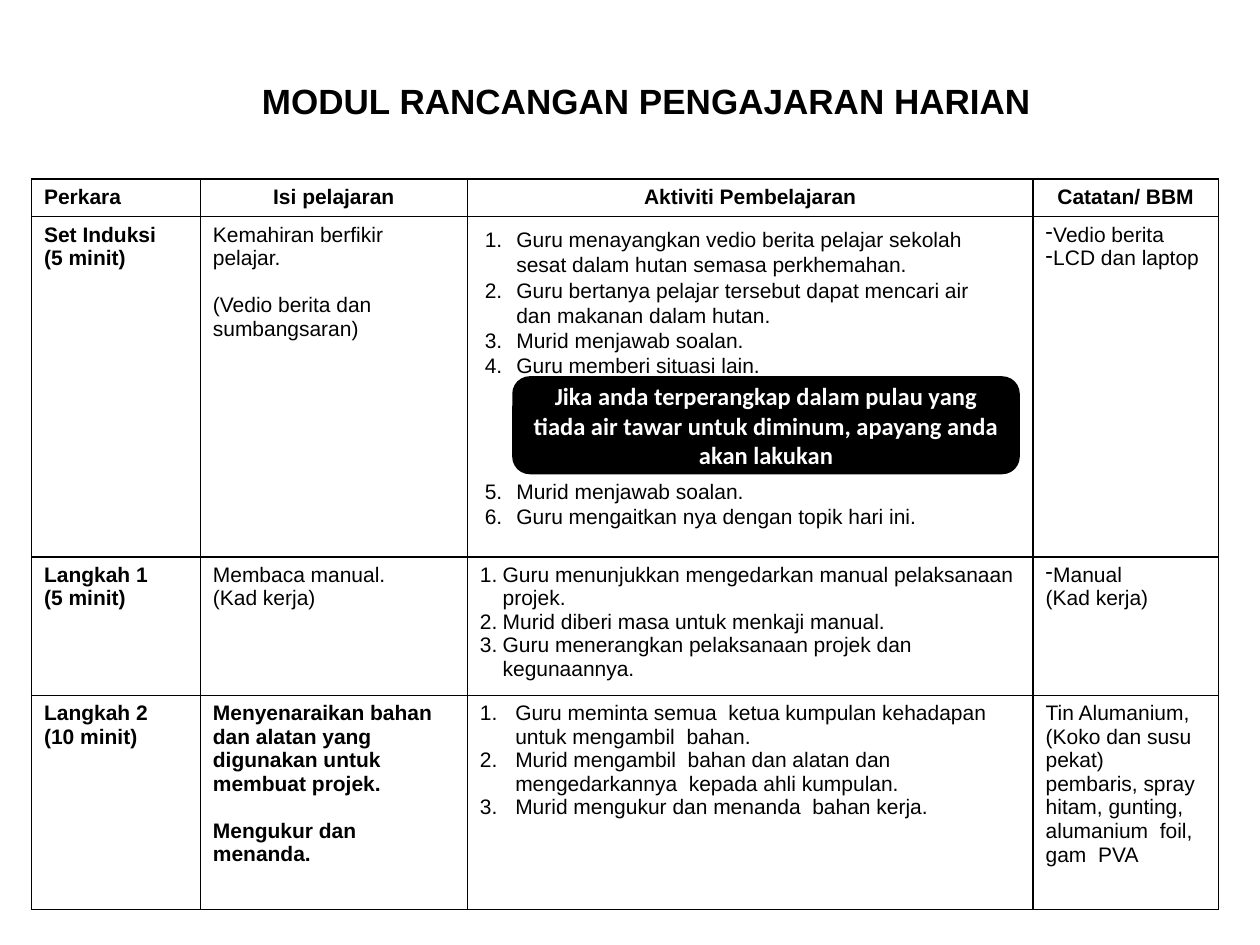
from dataclasses import dataclass

from lxml import etree
from pptx import Presentation
from pptx.dml.color import RGBColor
from pptx.enum.shapes import MSO_SHAPE
from pptx.enum.text import MSO_ANCHOR, MSO_AUTO_SIZE, PP_ALIGN
from pptx.oxml.ns import qn
from pptx.util import Inches, Pt

LEFT, CENTER = PP_ALIGN.LEFT, PP_ALIGN.CENTER
MIDDLE = MSO_ANCHOR.MIDDLE
NO_FIT = MSO_AUTO_SIZE.NONE
ROUNDED = MSO_SHAPE.ROUNDED_RECTANGLE
COLORS = {"ink": "000000", "paper": "FFFFFF"}
NUMBERED = "arabicPeriod"
GAP = 13.4
COL_WIDTHS = (1.34, 2.12, 4.49, 1.47)
ROW_HEIGHTS = (0.3, 2.7, 1.1, 1.7)


@dataclass
class Para:
    text: str
    bold: bool = False
    align: PP_ALIGN = LEFT
    bullet: str = ""
    indent: float = 0
    before: float = 0
    line: float = 0


def rgb(name: str) -> RGBColor:
    return RGBColor.from_string(COLORS[name])


def write(tf, paras: list[Para], size=12, font="Arial", color="ink") -> None:
    for i, item in enumerate(paras):
        p = tf.paragraphs[0] if i == 0 else tf.add_paragraph()
        p.alignment = item.align
        p.space_before = Pt(item.before)
        if item.line:
            p.line_spacing = Pt(item.line)
        if item.bullet:
            pPr = p._p.get_or_add_pPr()
            pPr.set("marL", str(Inches(item.indent)))
            pPr.set("indent", str(-Inches(item.indent)))
            if item.bullet == NUMBERED:
                etree.SubElement(pPr, qn("a:buAutoNum"), type=NUMBERED)
            else:
                etree.SubElement(pPr, qn("a:buChar"), char=item.bullet)
        r = p.add_run()
        r.text = item.text
        r.font.size = Pt(size)
        r.font.name = font
        r.font.bold = item.bold
        r.font.color.rgb = rgb(color)


def add_borders(cell) -> None:
    tcPr = cell._tc.get_or_add_tcPr()
    for i, side in enumerate(("a:lnL", "a:lnR", "a:lnT", "a:lnB")):
        ln = etree.Element(qn(side), w=str(Pt(1)))
        fill = etree.SubElement(ln, qn("a:solidFill"))
        etree.SubElement(fill, qn("a:srgbClr"), val=COLORS["ink"])
        tcPr.insert(i, ln)


def bold(*texts: str) -> list[Para]:
    return [Para(text, bold=True) for text in texts]


def plain(*texts: str) -> list[Para]:
    return [Para(text) for text in texts]


def numbered(indent: float, *texts: str) -> list[Para]:
    return [Para(text, bullet=NUMBERED, indent=indent) for text in texts]


def dashed(*texts: str) -> list[Para]:
    return [Para(text, bullet="-", indent=0.06) for text in texts]


def heading(text: str) -> list[Para]:
    return [Para(text, bold=True, align=CENTER)]


ROWS = [
    [bold("Perkara"), heading("Isi pelajaran"),
     heading("Aktiviti Pembelajaran"), heading("Catatan/ BBM")],
    [bold("Set Induksi", "(5 minit)"),
     [Para("Kemahiran berfikir pelajar."),
      Para("(Vedio berita dan sumbangsaran)", before=GAP)],
     [],
     dashed("Vedio berita", "LCD dan laptop")],
    [bold("Langkah 1", "(5 minit)"),
     plain("Membaca manual.", "(Kad kerja)"),
     numbered(0.18,
              "Guru menunjukkan mengedarkan manual pelaksanaan projek.",
              "Murid diberi masa untuk menkaji manual.",
              "Guru menerangkan pelaksanaan projek dan kegunaannya."),
     dashed("Manual") + plain("(Kad kerja)")],
    [bold("Langkah 2", "(10 minit)"),
     [Para("Menyenaraikan bahan dan alatan yang digunakan untuk membuat projek.", bold=True),
      Para("Mengukur dan", bold=True, before=GAP),
      Para("menanda.", bold=True)],
     numbered(0.28,
              "Guru meminta semua  ketua kumpulan kehadapan untuk mengambil  bahan.",
              "Murid mengambil  bahan dan alatan dan mengedarkannya  kepada ahli kumpulan.",
              "Murid mengukur dan menanda  bahan kerja."),
     plain("Tin Alumanium, (Koko dan susu pekat)  pembaris, spray hitam, "
           "gunting, alumanium  foil, gam  PVA")],
]

INDUCTION_STEPS = numbered(
    0.25,
    "Guru menayangkan vedio berita pelajar sekolah sesat dalam hutan semasa perkhemahan.",
    "Guru bertanya pelajar tersebut dapat mencari air dan makanan dalam hutan.",
    "Murid menjawab soalan.",
    "Guru memberi situasi lain.",
    "Murid menjawab soalan.",
    "Guru mengaitkan nya dengan topik hari ini.",
)


def add_title(s) -> None:
    title = s.shapes.title
    title.left, title.top = Inches(1.92), Inches(0.58)
    title.width, title.height = Inches(6.42), Inches(0.43)
    tf = title.text_frame
    tf.word_wrap = True
    tf.auto_size = NO_FIT
    tf.vertical_anchor = MIDDLE
    write(tf, heading("MODUL RANCANGAN PENGAJARAN HARIAN"), size=20)


def add_lesson_table(s) -> None:
    frame = s.shapes.add_table(
        len(ROW_HEIGHTS), len(COL_WIDTHS), Inches(0.25), Inches(1.42),
        Inches(sum(COL_WIDTHS)), Inches(sum(ROW_HEIGHTS)))
    table = frame.table
    table.first_row = False
    table.horz_banding = False
    for col, width in zip(table.columns, COL_WIDTHS):
        col.width = Inches(width)
    for row, height, contents in zip(table.rows, ROW_HEIGHTS, ROWS):
        row.height = Inches(height)
        for cell, paras in zip(row.cells, contents):
            cell.fill.solid()
            cell.fill.fore_color.rgb = rgb("paper")
            add_borders(cell)
            write(cell.text_frame, paras)


def add_induction_steps(s) -> None:
    line = 14.4
    for step in INDUCTION_STEPS:
        step.line = line
    INDUCTION_STEPS[4].before = 4 * line
    box = s.shapes.add_textbox(Inches(3.75), Inches(1.75), Inches(4.33), Inches(2.52))
    box.text_frame.word_wrap = True
    write(box.text_frame, INDUCTION_STEPS)


def add_question(s) -> None:
    sp = s.shapes.add_shape(ROUNDED, Inches(4.08), Inches(3), Inches(4), Inches(0.75))
    sp.shadow.inherit = False
    sp.fill.solid()
    sp.fill.fore_color.rgb = rgb("ink")
    sp.line.color.rgb = rgb("ink")
    sp.line.width = Pt(2)
    tf = sp.text_frame
    tf.word_wrap = True
    tf.vertical_anchor = MIDDLE
    write(tf, heading("Jika anda terperangkap dalam pulau yang tiada air tawar "
                      "untuk diminum, apayang anda akan lakukan"),
          size=14, font="Calibri", color="paper")


def main() -> None:
    prs = Presentation()
    prs.slide_width, prs.slide_height = Inches(10), Inches(7.5)
    s = prs.slides.add_slide(prs.slide_layouts[5])
    add_title(s)
    add_lesson_table(s)
    add_induction_steps(s)
    add_question(s)
    prs.save("out.pptx")


if __name__ == "__main__":
    main()
